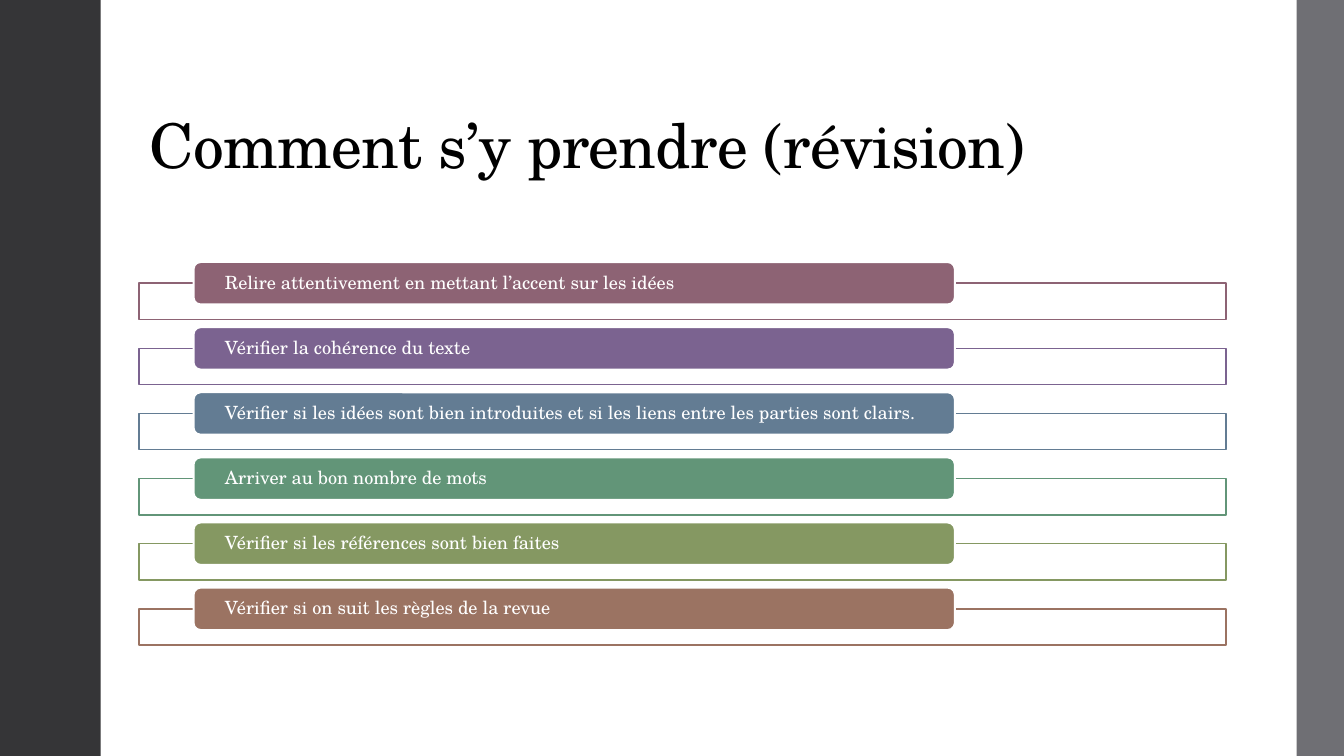
from dataclasses import dataclass

from pptx import Presentation, util as u
from pptx.dml.color import RGBColor
from pptx.enum import shapes, text
from pptx.oxml import parse_xml
from pptx.oxml.ns import nsdecls, qn

FONT = "TeX Gyre Schola"
COLORS = {
    "white": "FFFFFF", "black": "000000", "dark": "353537", "grey": "6F6F74",
    "plum": "8D6374", "violet": "7B6390", "blue": "637C93",
    "green": "629578", "olive": "859862", "brown": "9B7362",
}
FIRST_TOP = 2.6
PITCH = 3.23 / 5
FRAME_DROP = 0.21


@dataclass
class Box:
    left: float
    top: float
    width: float
    height: float
    fill: str
    line: str | None = None
    line_pt: float = 0
    rounded: bool = False


@dataclass
class Step:
    label: str
    color: str


STEPS = [
    Step("Relire attentivement en mettant l’accent sur les idées", "plum"),
    Step("Vérifier la cohérence du texte", "violet"),
    Step("Vérifier si les idées sont bien introduites et si les liens "
         "entre les parties sont clairs.", "blue"),
    Step("Arriver au bon nombre de mots", "green"),
    Step("Vérifier si les références sont bien faites", "olive"),
    Step("Vérifier si on suit les règles de la revue", "brown"),
]
SIDE_BANDS = [Box(0, 0, 1, 7.5, "dark"), Box(12.86, 0, 0.47, 7.5, "grey")]


def rgb(name: str) -> RGBColor:
    return RGBColor.from_string(COLORS[name])


def set_attrs(target, values: dict) -> None:
    for name, value in values.items():
        setattr(target, name, value)


def add_box(s, box: Box):
    kind = shapes.MSO_SHAPE.ROUNDED_RECTANGLE if box.rounded else shapes.MSO_SHAPE.RECTANGLE
    sp = s.shapes.add_shape(kind, u.Inches(box.left), u.Inches(box.top),
                            u.Inches(box.width), u.Inches(box.height))
    sp.shadow.inherit = False
    sp.fill.solid()
    sp.fill.fore_color.rgb = rgb(box.fill)
    if box.line:
        sp.line.color.rgb = rgb(box.line)
        sp.line.width = u.Pt(box.line_pt)
    else:
        sp.line.fill.background()
    return sp


def set_opacity(sp, percent: int) -> None:
    color = sp.fill._xPr.find(qn("a:solidFill"))[0]
    color.append(parse_xml(f'<a:alpha {nsdecls("a")} val="{percent * 1000}"/>'))


def write(sp, words: str, size: float, color: str, frame: dict):
    """Fill a shape with one left-aligned line and return its run."""
    tf = sp.text_frame
    set_attrs(tf, {"word_wrap": True, "auto_size": text.MSO_AUTO_SIZE.NONE, **frame})
    p = tf.paragraphs[0]
    set_attrs(p, {"alignment": text.PP_ALIGN.LEFT, "line_spacing": 0.9})
    r = p.add_run()
    r.text = words
    set_attrs(r.font, {"name": FONT, "size": u.Pt(size)})
    r.font.color.rgb = rgb(color)
    return r


def add_title(s, words: str) -> None:
    sp = s.shapes.title
    set_attrs(sp, {"left": u.Inches(1.38), "top": u.Inches(0.4),
                   "width": u.Inches(10.78), "height": u.Inches(1.45)})
    r = write(sp, words, 44, "black", {"vertical_anchor": text.MSO_ANCHOR.BOTTOM})
    r.font._element.set("spc", "-50")


def add_step(s, step: Step, top: float) -> None:
    frame = add_box(s, Box(1.38, top + FRAME_DROP, 10.78, 0.36, "white", step.color, 1.1))
    set_opacity(frame, 90)
    label = add_box(s, Box(1.92, top, 7.55, 0.42, step.color, "white", 1.35, True))
    write(label, step.label, 13, "white", {
        "vertical_anchor": text.MSO_ANCHOR.MIDDLE,
        "margin_left": u.Inches(0.29), "margin_right": u.Inches(0.29),
        "margin_top": 0, "margin_bottom": 0,
    })


def main() -> None:
    prs = Presentation()
    set_attrs(prs, {"slide_width": u.Inches(13.33), "slide_height": u.Inches(7.5)})
    s = prs.slides.add_slide(prs.slide_layouts[5])
    add_title(s, "Comment s’y prendre (révision)")
    for band in SIDE_BANDS:
        add_box(s, band)
    for i, step in enumerate(STEPS):
        add_step(s, step, FIRST_TOP + i * PITCH)
    prs.save("out.pptx")


if __name__ == "__main__":
    main()
